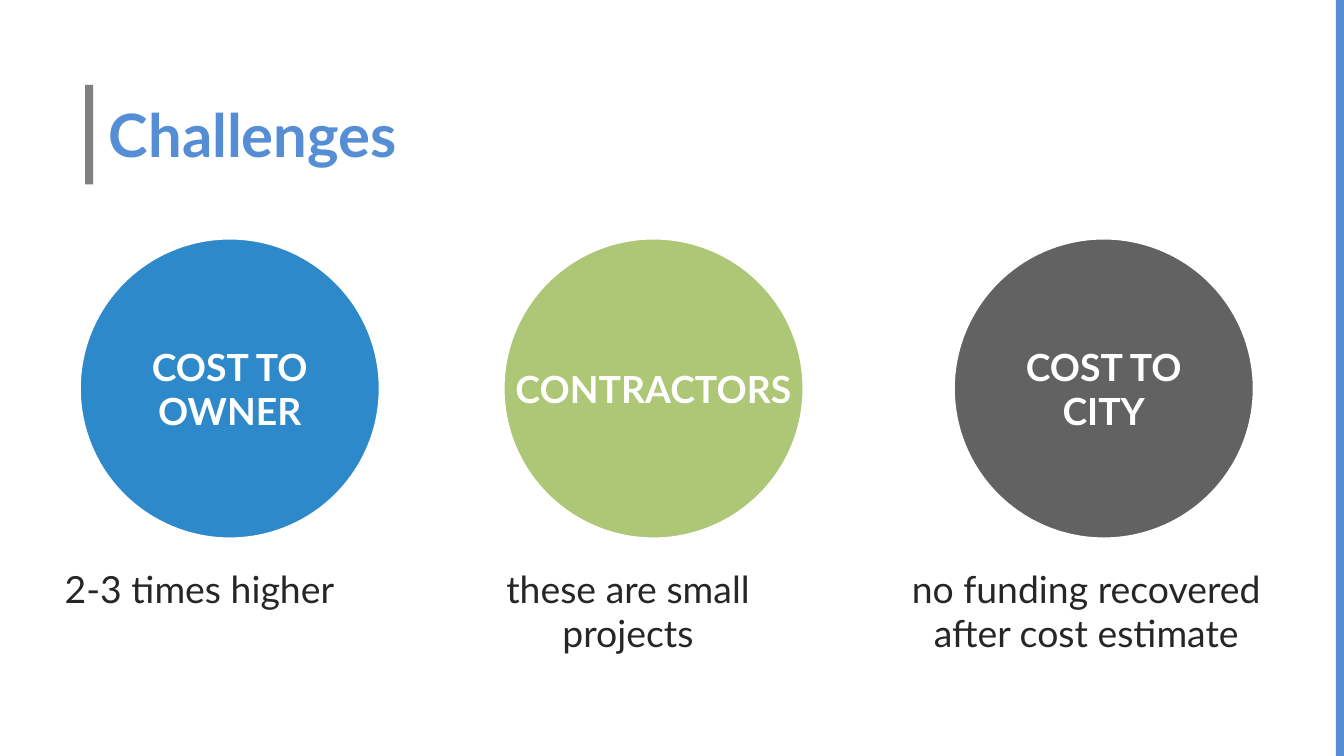
from dataclasses import dataclass

from lxml import etree
from pptx import Presentation
from pptx.dml.color import RGBColor
from pptx.enum.shapes import MSO_SHAPE
from pptx.enum.text import MSO_ANCHOR, MSO_AUTO_SIZE, PP_ALIGN
from pptx.oxml.ns import qn
from pptx.util import Inches, Pt

RECTANGLE, OVAL = MSO_SHAPE.RECTANGLE, MSO_SHAPE.OVAL
TOP, MIDDLE = MSO_ANCHOR.TOP, MSO_ANCHOR.MIDDLE
LEFT, CENTER = PP_ALIGN.LEFT, PP_ALIGN.CENTER
FIXED = MSO_AUTO_SIZE.NONE

# A 16:9 slide
WIDTH = Inches(10)
HEIGHT = WIDTH * 9 // 16
FONT = "Lato"
COLORS = {
    "accent": "558ED5",
    "rule": "7F7F7F",
    "owner": "0070C0",
    "contractors": "9BBB59",
    "city": "404040",
    "caption": "262626",
    "white": "FFFFFF",
}
CIRCLE_TOP, CIRCLE_SIZE, CIRCLE_OPACITY = 30.95, 23, 82
CAPTION_TOP = 73.07


@dataclass(frozen=True)
class Box:
    """Place and size as percentages of the slide's width and height."""
    left: float
    top: float
    width: float
    height: float

    def lengths(self) -> tuple[int, int, int, int]:
        return (round(WIDTH * self.left / 100), round(HEIGHT * self.top / 100),
                round(WIDTH * self.width / 100), round(HEIGHT * self.height / 100))


@dataclass(frozen=True)
class Challenge:
    heading: str
    color: str
    circle_left: float
    caption: str
    caption_left: float
    caption_width: float
    caption_height: float


CHALLENGES = [
    Challenge("COST TO\nOWNER", "owner", 5.6,
              "2-3 times higher", 1.1, 27.5, 17.6),
    Challenge("CONTRACTORS", "contractors", 37.13,
              "these are small projects", 31.63, 30.2, 27.02),
    Challenge("COST TO\nCITY", "city", 70.63,
              "no funding recovered after cost estimate", 65.33, 31, 25.24),
]


def rgb(color: str) -> RGBColor:
    return RGBColor.from_string(COLORS[color])


def write(frame, text: str, size: float, color: str, bold: bool = False,
          align=CENTER, anchor=TOP, wrap: bool = True) -> None:
    frame.text = text
    inset = Inches(0.1)
    frame_format = {
        "auto_size": FIXED, "word_wrap": wrap, "vertical_anchor": anchor,
        "margin_left": inset, "margin_right": inset,
        "margin_top": inset, "margin_bottom": inset,
    }
    for name, value in frame_format.items():
        setattr(frame, name, value)
    font_format = {"name": FONT, "size": Pt(size), "bold": bold}
    for paragraph in frame.paragraphs:
        paragraph.alignment = align
        for run in paragraph.runs:
            for name, value in font_format.items():
                setattr(run.font, name, value)
            run.font.color.rgb = rgb(color)


def add_filled(slide, preset, box: Box, color: str):
    shape = slide.shapes.add_shape(preset, *box.lengths())
    shape.shadow.inherit = False
    shape.fill.solid()
    shape.fill.fore_color.rgb = rgb(color)
    shape.line.fill.background()
    return shape


def add_circle(slide, challenge: Challenge) -> None:
    # The height share is scaled so that the circle stays round
    box = Box(challenge.circle_left, CIRCLE_TOP, CIRCLE_SIZE,
              CIRCLE_SIZE * WIDTH / HEIGHT)
    circle = add_filled(slide, OVAL, box, challenge.color)
    fill_color = circle.element.spPr.find(qn("a:solidFill"))[0]
    etree.SubElement(fill_color, qn("a:alpha"), val=str(CIRCLE_OPACITY * 1000))
    circle.line.color.rgb = rgb("white")
    circle.line.width = Pt(6)
    write(circle.text_frame, challenge.heading, 20, "white", bold=True,
          anchor=MIDDLE, wrap=False)


def add_caption(slide, challenge: Challenge) -> None:
    box = Box(challenge.caption_left, CAPTION_TOP,
              challenge.caption_width, challenge.caption_height)
    caption = slide.shapes.add_textbox(*box.lengths())
    write(caption.text_frame, challenge.caption, 20, "caption")


def main() -> None:
    presentation = Presentation()
    presentation.slide_width, presentation.slide_height = WIDTH, HEIGHT
    slide = presentation.slides.add_slide(presentation.slide_layouts[5])

    # Title with its rule, and the band at the right edge
    add_filled(slide, RECTANGLE, Box(6.33, 11.24, 0.6, 13.16), "rule")
    add_filled(slide, RECTANGLE, Box(99.4, 0, 0.6, 100), "accent")
    title = slide.shapes.title
    title_box = Box(7.1, 11.2, 37.4, 11.73)
    title.left, title.top, title.width, title.height = title_box.lengths()
    write(title.text_frame, "Challenges", 32, "accent", bold=True, align=LEFT)

    # Captions, then the circles above them
    for challenge in CHALLENGES:
        add_caption(slide, challenge)
    for challenge in CHALLENGES:
        add_circle(slide, challenge)

    presentation.save("out.pptx")


if __name__ == "__main__":
    main()
